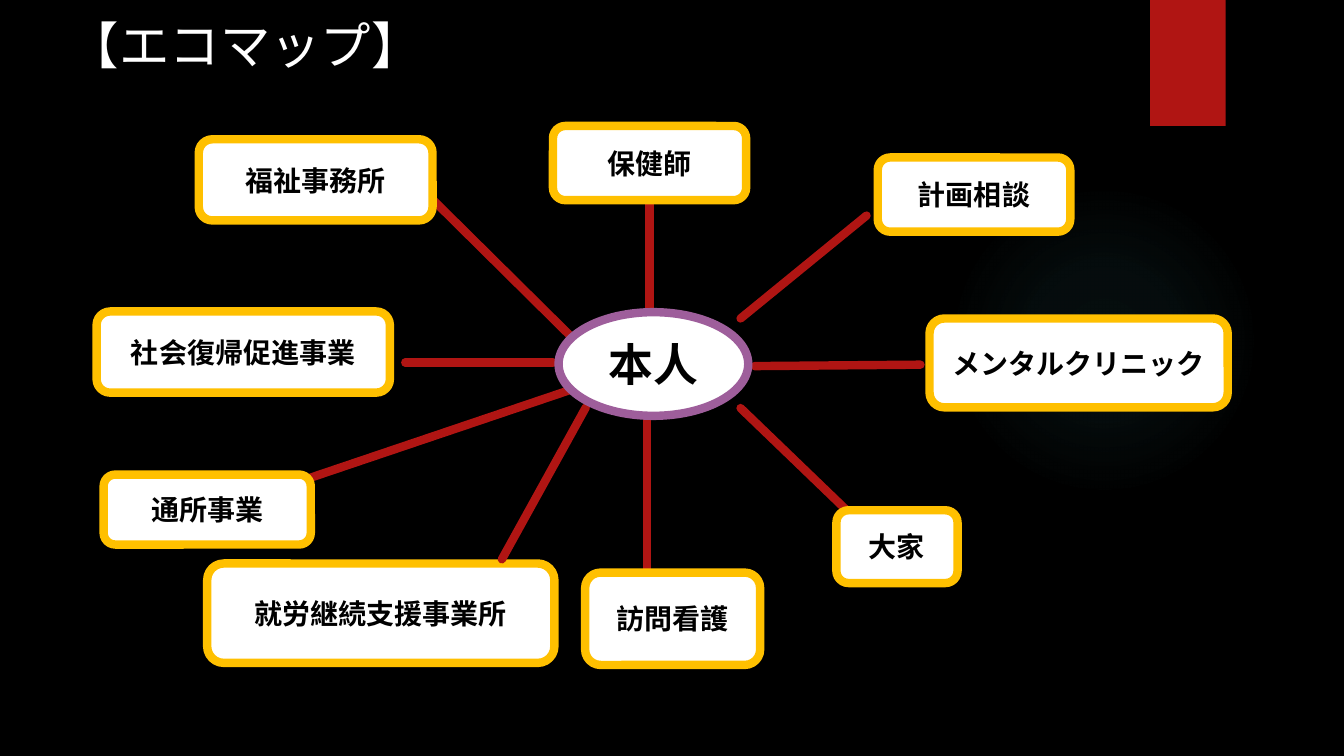
import pptx
import pptx.util
import pptx.oxml
import pptx.oxml.ns
import pptx.dml.color
import pptx.enum.shapes
import pptx.enum.text
from dataclasses import dataclass
from lxml import etree

Pt = pptx.util.Pt
Kind = pptx.enum.shapes.MSO_SHAPE
Align = pptx.enum.text.PP_ALIGN
Anchor = pptx.enum.text.MSO_ANCHOR
qn = pptx.oxml.ns.qn


@dataclass(frozen=True)
class Theme:
    font: str = "TeX Gyre Adventor"
    back: str = "000000"
    ink: str = "000000"
    light: str = "FFFFFF"
    red: str = "B01513"
    gold: str = "FFC000"
    plum: str = "9E5E9B"
    teal: str = "50B9C1"
    head: int = 36
    core: int = 32
    label: int = 20
    stroke: int = 6


# Name, box (left, top, width, height), line start, line end
LINKS = [
    ("通所事業", (74, 339, 148, 50), (407.5, 278.5), (221, 341.5)),
    ("訪問看護", (418, 409, 125, 66), (462, 291.5), (462, 409)),
    ("社会復帰促進事業", (69, 222.5, 209.5, 58), (395, 259), (289.5, 259)),
    ("福祉事務所", (142, 99.5, 167, 58), (407.5, 240), (309, 142.5)),
    ("保健師", (395, 90, 138, 53), (464, 227.5), (464, 143)),
    ("計画相談", (627, 112.5, 137.5, 53), (529, 227.5), (619, 154)),
    ("メンタルクリニック", (664, 227.5, 213, 63.5), (539, 261.5), (657.5, 260.5)),
    ("大家", (597.5, 364.5, 86.5, 52), (529, 291.5), (651, 409)),
]
# This line lies over its box
WORK = ("就労継続支援事業所", (148, 402.5, 248, 71), (418.5, 291), (358.5, 399.5))


def color(code):
    return pptx.dml.color.RGBColor.from_string(code)


class Board:
    def __init__(self, slide, theme):
        self.slide = slide
        self.theme = theme
        fill = slide.background.fill
        fill.solid()
        fill.fore_color.rgb = color(theme.back)

    def label(self, frame, text, size, code, bold, align):
        frame.text = text
        para = frame.paragraphs[0]
        para.alignment = align
        font = para.runs[0].font
        font.name = self.theme.font
        font.size = Pt(size)
        font.bold = bold
        font.color.rgb = color(code)

    def title(self, text, box):
        shape = self.slide.shapes.title
        shape.left, shape.top, shape.width, shape.height = map(Pt, box)
        frame = shape.text_frame
        frame.auto_size = pptx.enum.text.MSO_AUTO_SIZE.NONE
        frame.vertical_anchor = Anchor.TOP
        self.label(frame, text, self.theme.head, self.theme.light, False, Align.LEFT)

    def shape(self, kind, box, fill=None, edge=None):
        shape = self.slide.shapes.add_shape(kind, *map(Pt, box))
        shape.shadow.inherit = False
        if fill:
            shape.fill.solid()
            shape.fill.fore_color.rgb = color(fill)
        if edge:
            shape.line.color.rgb = color(edge)
            shape.line.width = Pt(self.theme.stroke)
        else:
            shape.line.fill.background()
        return shape

    def node(self, kind, text, box, edge, size):
        shape = self.shape(kind, box, self.theme.light, edge)
        frame = shape.text_frame
        frame.word_wrap = True
        frame.vertical_anchor = Anchor.MIDDLE
        self.label(frame, text, size, self.theme.ink, True, Align.CENTER)
        return shape

    def box(self, text, box):
        return self.node(Kind.ROUNDED_RECTANGLE, text, box,
                         self.theme.gold, self.theme.label)

    def line(self, start, end):
        """Draw a straight line with round ends."""
        line = self.slide.shapes.add_connector(
            pptx.enum.shapes.MSO_CONNECTOR.STRAIGHT, *map(Pt, start + end))
        line.line.color.rgb = color(self.theme.red)
        line.line.width = Pt(self.theme.stroke)
        props = line._element.spPr
        props.find(qn("a:ln")).set("cap", "rnd")
        etree.SubElement(props, qn("a:effectLst"))
        return line

    def glow(self, box, stops):
        """Draw a circle that fades outward; stops are (place, alpha) in percent."""
        shape = self.shape(Kind.OVAL, box)
        shape.fill.gradient()
        grad = shape._element.spPr.find(qn("a:gradFill"))
        for child in list(grad):
            grad.remove(child)
        group = etree.SubElement(grad, qn("a:gsLst"))
        for place, alpha in stops:
            stop = etree.SubElement(group, qn("a:gs"), pos=str(place * 1000))
            tint = etree.SubElement(stop, qn("a:srgbClr"), val=self.theme.teal)
            etree.SubElement(tint, qn("a:alpha"), val=str(alpha * 1000))
        shade = etree.SubElement(grad, qn("a:path"), path="circle")
        etree.SubElement(shade, qn("a:fillToRect"),
                         dict.fromkeys("ltrb", "50000"))


def main():
    deck = pptx.Presentation()
    deck.slide_width, deck.slide_height = Pt(960), Pt(540)
    theme = Theme()
    board = Board(deck.slides.add_slide(deck.slide_layouts[5]), theme)

    board.glow((677.5, 132, 222, 222), [(0, 7), (36, 6), (69, 0)])
    board.shape(Kind.RECTANGLE, (821.5, 0, 54, 90), theme.red)
    board.title("【エコマップ】", (42, 6.5, 700, 60))

    lines = {name: board.line(start, end) for name, _, start, end in LINKS}
    boxes = {name: board.box(name, box) for name, box, _, _ in LINKS}
    lines["保健師"].end_connect(boxes["保健師"], 2)

    name, box, start, end = WORK
    board.box(name, box)
    board.line(start, end)
    board.node(Kind.OVAL, "本人", (399, 223, 135.5, 74), theme.plum, theme.core)

    deck.save("out.pptx")


if __name__ == "__main__":
    main()
